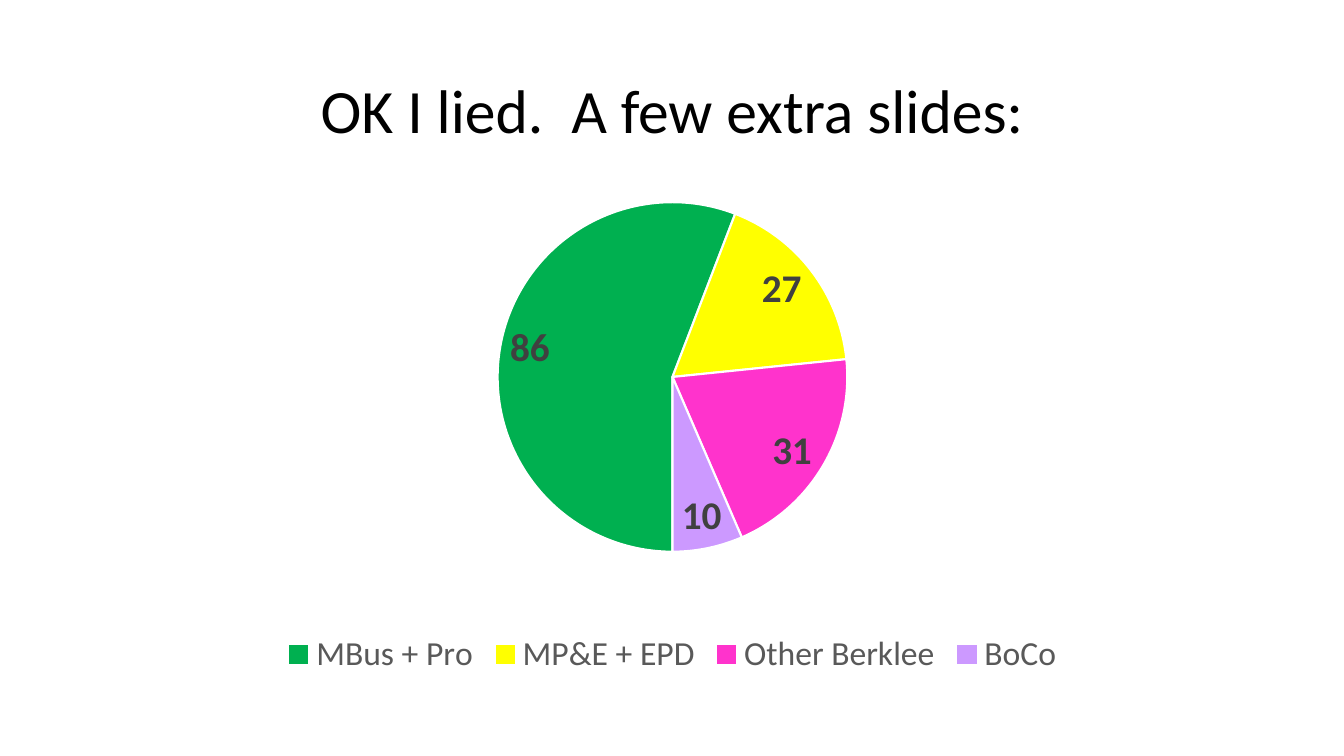
from lxml import etree
from pptx import Presentation
from pptx import util as u
from pptx.chart.data import CategoryChartData
from pptx.dml.color import RGBColor
from pptx.enum import chart as ch, text as tx
from pptx.oxml import ns

WIDE, HIGH = u.Inches(13.33), u.Inches(7.5)
FACE = "Calibri"
BLACK = RGBColor(0x00, 0x00, 0x00)
WHITE = RGBColor(0xFF, 0xFF, 0xFF)
DARK = RGBColor(0x40, 0x40, 0x40)
GREY = RGBColor(0x59, 0x59, 0x59)
GREEN = RGBColor(0x00, 0xB0, 0x50)
YELLOW = RGBColor(0xFF, 0xFF, 0x00)
PINK = RGBColor(0xFF, 0x33, 0xCC)
LILAC = RGBColor(0xCC, 0x99, 0xFF)
GROUPS = [
    ("MBus + Pro", 86, GREEN),
    ("MP&E + EPD", 27, YELLOW),
    ("Other Berklee", 31, PINK),
    ("BoCo", 10, LILAC),
]


def style(font, size, color, bold=False):
    font.name, font.size, font.bold = FACE, u.Pt(size), bold
    font.color.rgb = color


def add_title(slide, box, words):
    frame = slide.shapes.add_textbox(*box).text_frame
    frame.word_wrap = True
    frame.vertical_anchor = tx.MSO_ANCHOR.MIDDLE
    line = frame.paragraphs[0]
    line.text = words
    line.alignment = tx.PP_ALIGN.CENTER
    line.line_spacing = 0.9
    style(line.font, 44, BLACK)


def place_plot(chart, left, top, width, height):
    area = chart._chartSpace.chart.plotArea
    for old in area.findall(ns.qn("c:layout")):
        area.remove(old)
    layout = etree.Element(ns.qn("c:layout"))
    manual = etree.SubElement(layout, ns.qn("c:manualLayout"))
    parts = [("layoutTarget", "inner"), ("xMode", "edge"), ("yMode", "edge"),
             ("x", left), ("y", top), ("w", width), ("h", height)]
    for tag, val in parts:
        etree.SubElement(manual, ns.qn("c:" + tag)).set("val", str(val))
    area.insert(0, layout)


def add_pie(slide, box, groups):
    names, counts, colors = zip(*groups)
    data = CategoryChartData()
    data.categories = names
    data.add_series("Series 1", counts)
    chart = slide.shapes.add_chart(ch.XL_CHART_TYPE.PIE, *box, data).chart
    chart.has_title = False
    style(chart.font, 10, BLACK)

    chart.has_legend = True
    chart.legend.position = ch.XL_LEGEND_POSITION.BOTTOM
    chart.legend.include_in_layout = False
    style(chart.legend.font, 24, GREY)

    plot = chart.plots[0]
    plot.vary_by_categories = True
    series = plot.series[0]
    for at, color in enumerate(colors):
        look = series.points[at].format
        look.fill.solid()
        look.fill.fore_color.rgb = color
        look.line.color.rgb = WHITE
        look.line.width = u.Pt(1.5)

    labels = series.data_labels
    labels.show_value = True
    labels.position = ch.XL_LABEL_POSITION.BEST_FIT
    style(labels.font, 28, DARK, True)

    pie = chart._chartSpace.chart.plotArea.find(ns.qn("c:pieChart"))
    for old in pie.findall(ns.qn("c:firstSliceAng")):
        pie.remove(old)
    etree.SubElement(pie, ns.qn("c:firstSliceAng")).set("val", "180")
    place_plot(chart, 0.33, 0.03, 0.34, 0.71)


def main():
    deck = Presentation()
    deck.slide_width, deck.slide_height = WIDE, HIGH
    slide = deck.slides.add_slide(deck.slide_layouts[6])
    add_title(slide, [u.Inches(n) for n in (0.92, 0.4, 11.5, 1.45)],
              "OK I lied.  A few extra slides:")
    add_pie(slide, [u.Inches(n) for n in (1.57, 1.85, 10.2, 4.91)], GROUPS)
    deck.save("out.pptx")


if __name__ == "__main__":
    main()
